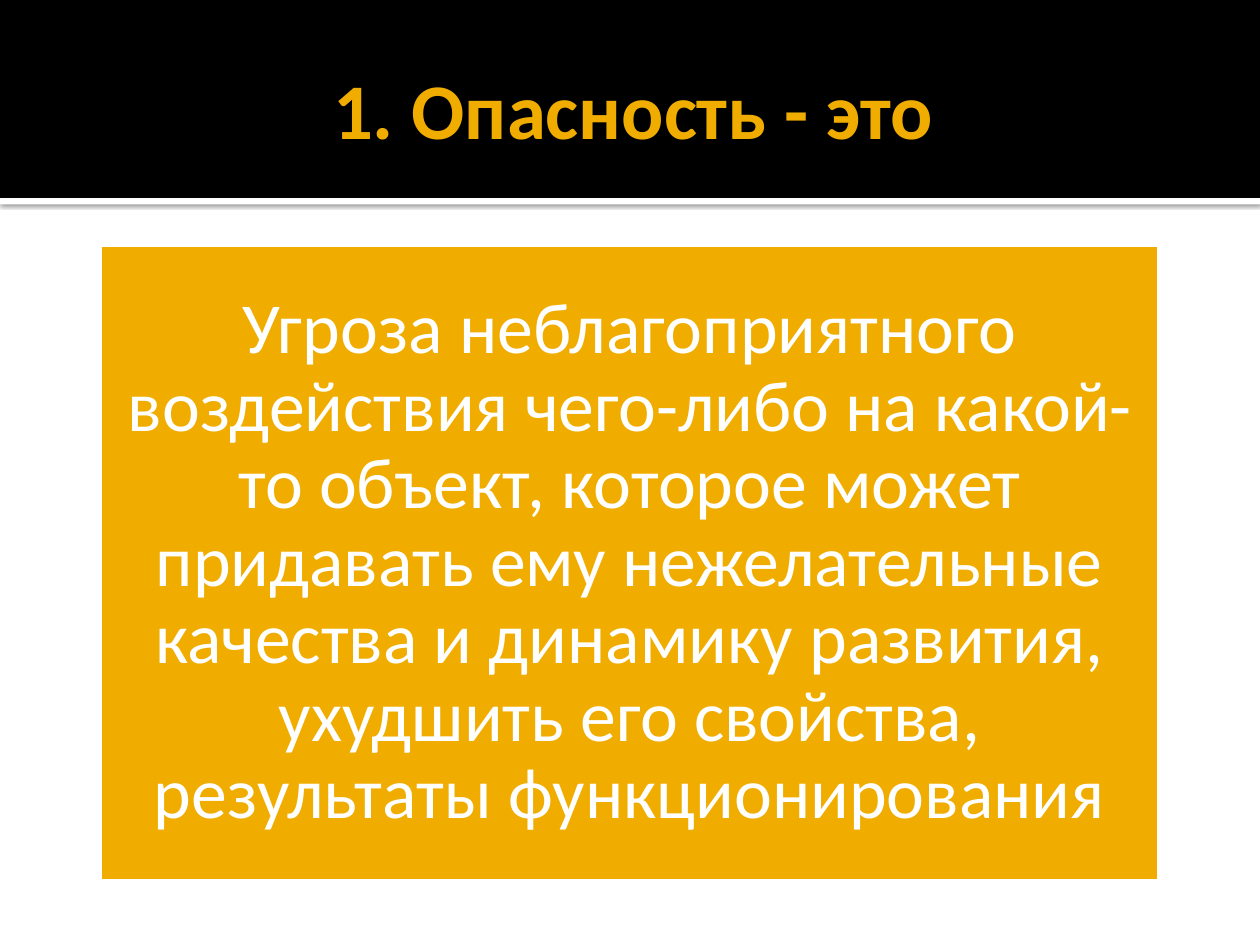
from lxml import etree
from pptx import Presentation
from pptx.dml.color import RGBColor
from pptx.enum.shapes import MSO_SHAPE
from pptx.enum.text import MSO_ANCHOR, MSO_AUTO_SIZE, PP_ALIGN
from pptx.oxml import parse_xml
from pptx.util import Cm, Pt

COLORS = {"gold": "F0AD00", "white": "FFFFFF", "black": "000000"}
SHADOW = """<a:effectLst xmlns:a="http://schemas.openxmlformats.org/drawingml/2006/main">
<a:outerShdw blurRad="31750" dist="10160" dir="5400000" algn="tl" rotWithShape="0">
<a:srgbClr val="000000"><a:alpha val="60000"/></a:srgbClr></a:outerShdw></a:effectLst>"""


def add_box(left, top, width, height, color):
    box = slide.shapes.add_shape(
        MSO_SHAPE.RECTANGLE, Cm(left), Cm(top), Cm(width), Cm(height))
    box.shadow.inherit = False
    box.fill.solid()
    box.fill.fore_color.rgb = RGBColor.from_string(COLORS[color])
    box.line.fill.background()
    return box


def set_text(shape, text, size, color, bold, pads):
    frame = shape.text_frame
    frame.text = text
    frame.word_wrap = True
    frame.auto_size = MSO_AUTO_SIZE.NONE
    frame.vertical_anchor = MSO_ANCHOR.MIDDLE
    frame.margin_left, frame.margin_top, frame.margin_right, frame.margin_bottom = map(Cm, pads)
    line = frame.paragraphs[0]
    line.alignment = PP_ALIGN.CENTER
    font = line.runs[0].font
    font.name = "Calibri"
    font.size = Pt(size)
    font.bold = bold
    font.color.rgb = RGBColor.from_string(COLORS[color])
    return line


deck = Presentation()
deck.slide_width, deck.slide_height = Cm(25.4), Cm(19.05)
slide = deck.slides.add_slide(deck.slide_layouts[5])
title = slide.shapes.title

strip = add_box(0, 3.99, 25.4, 0.13, "white")
props = strip.element.spPr
for old in props.findall("{*}effectLst"):
    props.remove(old)
props.append(parse_xml(SHADOW))
band = add_box(0, 0, 25.4, 3.99, "black")
for bar in (strip, band):
    title.element.addprevious(bar.element)

title.left, title.top, title.width, title.height = Cm(1.27), Cm(0.43), Cm(22.86), Cm(3.48)
set_text(title, "1. Опасность - это", 45, "gold", True, (0.25, 0.13, 0.13, 0.13))

card = add_box(2, 4.92, 21.4, 12.86, "gold")
card.line.color.rgb = RGBColor.from_string(COLORS["white"])
card.line.width = Pt(3.78)
body = set_text(
    card,
    "Угроза неблагоприятного воздействия чего-либо на какой-то объект, "
    "которое может придавать ему нежелательные качества и динамику развития, "
    "ухудшить его свойства, результаты функционирования",
    41, "white", False, (0.43, 0.43, 0.43, 0.43))
body.line_spacing = 0.9

deck.save("out.pptx")
